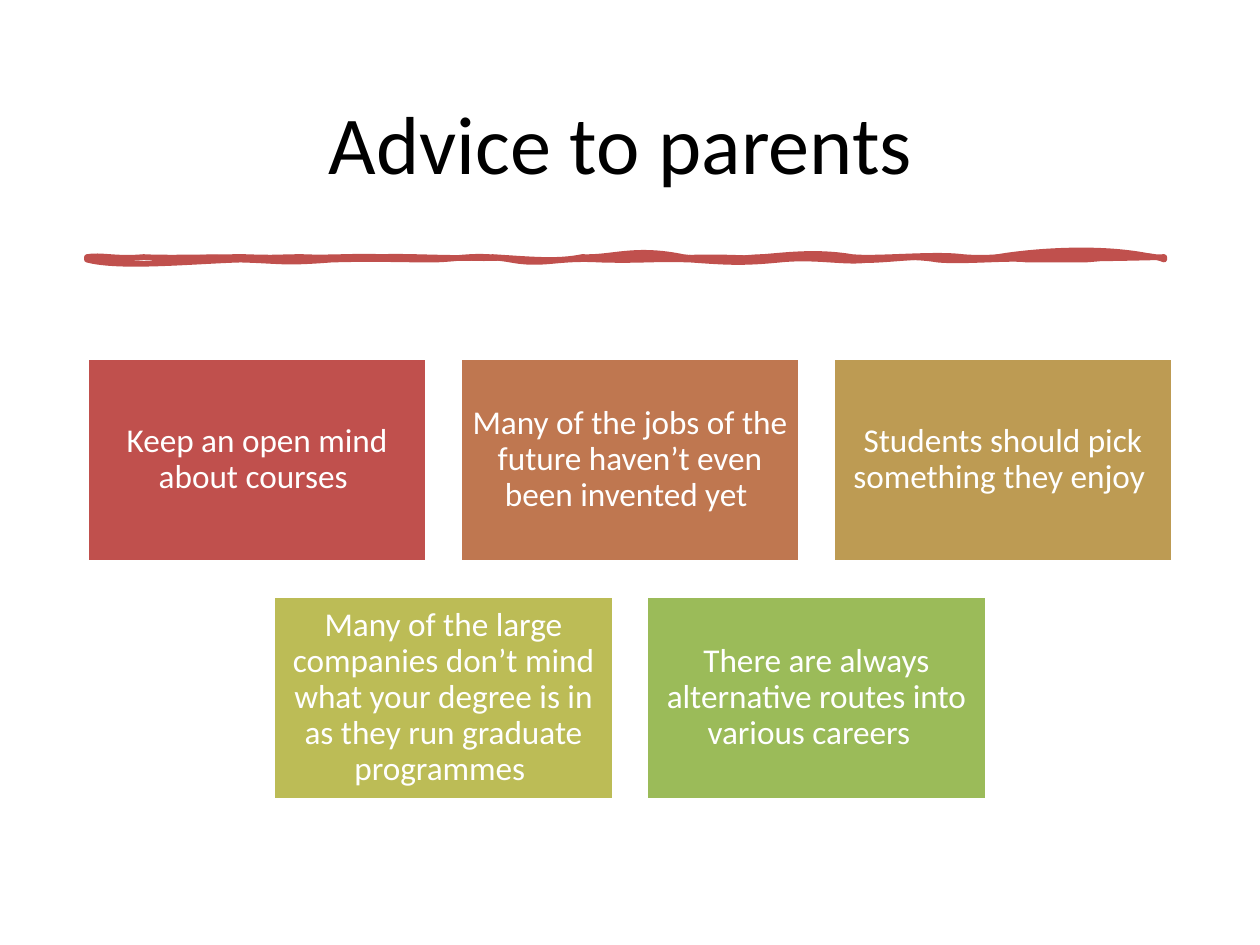
import lxml.etree
import pptx
import pptx.util
import pptx.dml.color
import pptx.enum.shapes
import pptx.enum.text
import pptx.oxml.ns

Inches = pptx.util.Inches
Pt = pptx.util.Pt
RGBColor = pptx.dml.color.RGBColor
qn = pptx.oxml.ns.qn

BLACK = RGBColor(0x00, 0x00, 0x00)
WHITE = RGBColor(0xFF, 0xFF, 0xFF)
RED = RGBColor(0xC0, 0x50, 0x4D)
RUST = RGBColor(0xBF, 0x77, 0x50)
GOLD = RGBColor(0xBD, 0x9B, 0x53)
OLIVE = RGBColor(0xBC, 0xBC, 0x56)
GREEN = RGBColor(0x9B, 0xBB, 0x59)

ROWS = [
    [("Keep an open mind about courses ", RED),
     ("Many of the jobs of the future haven’t even been invented yet ", RUST),
     ("Students should pick something they enjoy ", GOLD)],
    [("Many of the large companies don’t mind what your degree is in "
      "as they run graduate programmes ", OLIVE),
     ("There are always alternative routes into various careers  ", GREEN)],
]
CARD_W, CARD_H, GAP = 2.7, 1.62, 0.26
MID, TOP, PITCH = 5, 2.84, 1.89

# Brush stroke: every curve is (x1, y1, x2, y2, end x) and ends on its edge.
LEFT, RIGHT, UPPER, LOWER = 0.69, 9.24, 2.04, 2.06
EDGE_TOP = [
    (0.8, 2.02, 0.92, 2.06, 1.14), (1.31, 2.05, 1.67, 2.04, 1.94),
    (2.23, 2.05, 2.19, 2.04, 2.4), (2.61, 2.05, 2.84, 2.03, 3.02),
    (3.26, 2.03, 3.63, 2.06, 3.91), (4.23, 2.06, 4.42, 2.08, 4.62),
    (4.86, 2.05, 5.03, 1.96, 5.42), (5.76, 2.08, 5.93, 2.04, 6.05),
    (6.2, 2.03, 6.47, 1.99, 6.76), (6.96, 2.06, 7.41, 2.01, 7.64),
    (7.86, 2.06, 8.06, 2.02, 8.18), (8.34, 2.06, 8.84, 2.05, RIGHT)]
EDGE_LOW = [
    (9.11, 2, 8.78, 2.05, 8.61), (8.44, 2.06, 8.3, 2.06, 8.15),
    (8.03, 2.04, 7.64, 2.08, 7.44), (7.27, 2.03, 7.09, 2.04, 6.9),
    (6.71, 2.09, 6.49, 2.03, 6.19), (5.89, 2.09, 5.76, 2.08, 5.48),
    (5.17, 2.05, 5.1, 2.07, 4.76), (4.41, 2.04, 4.32, 2.11, 4.05),
    (3.76, 2.01, 3.64, 2.06, 3.42), (3.21, 2.06, 2.96, 2.05, 2.63),
    (2.24, 2.09, 2.25, 2.07, 1.91), (1.55, 2.07, 0.95, 2.13, LEFT)]
BODY_TOP = [
    (0.86, 2.03, 1, 2.03, 1.31), (1.63, 2.03, 1.59, 2.04, 1.77),
    (1.94, 2.02, 2.1, 2.05, 2.21), (2.33, 2.03, 2.52, 2.05, 2.65),
    (2.9, 2.05, 2.97, 2.02, 3.28), (3.58, 2.04, 3.65, 2.02, 3.91),
    (4.17, 2.08, 4.58, 2.05, 4.79), (5.07, 1.98, 5.18, 2.05, 5.33),
    (5.51, 2, 5.98, 2.03, 6.22), (6.5, 2.05, 6.66, 2.06, 7.1),
    (7.53, 2.06, 7.66, 2.02, 7.81), (7.99, 1.99, 8.75, 1.9, RIGHT)]
BODY_LOW = [
    (9.02, 2.04, 8.92, 2.03, 8.78), (8.7, 2.09, 8.3, 2.01, 7.9),
    (7.53, 2.08, 7.56, 2.04, 7.36), (7.14, 2.06, 6.82, 2.12, 6.64),
    (6.42, 2.01, 6.06, 2, 5.76), (5.45, 2.05, 5.39, 2.06, 5.05),
    (4.72, 2.09, 4.82, 2.07, 4.59), (4.4, 2.05, 4.28, 2.09, 4.05),
    (3.83, 2.09, 3.61, 2.05, 3.17), (2.73, 2.07, 2.75, 2.07, 2.45),
    (2.16, 2.05, 2.13, 2.05, 1.91), (1.72, 1.97, 1.31, 2.07, LEFT)]


def step(route, tag, *spots):
    """Add one path command, with its points measured from the stroke's corner."""
    node = lxml.etree.SubElement(route, qn(tag))
    for x, y in spots:
        lxml.etree.SubElement(node, qn("a:pt"), x=str(Inches(x - LEFT)),
                              y=str(Inches(y - UPPER)))


def trace(paths, top, low, **flags):
    """Add one closed path of curves along the top and back below."""
    route = lxml.etree.SubElement(
        paths, qn("a:path"), w=str(Inches(RIGHT - LEFT)),
        h=str(Inches(LOWER - UPPER)), **flags)
    step(route, "a:moveTo", (LEFT, UPPER))
    for y, curves in ((UPPER, top), (LOWER, low)):
        for x1, y1, x2, y2, end in curves:
            step(route, "a:cubicBezTo", (x1, y1), (x2, y2), (end, y))
        if y == UPPER:
            step(route, "a:lnTo", (RIGHT, LOWER))
    step(route, "a:close")


def write(frame, text, size=19, color=WHITE, inset=(0.08, 0.08), space=None):
    frame.word_wrap = True
    frame.vertical_anchor = pptx.enum.text.MSO_ANCHOR.MIDDLE
    frame.margin_left = frame.margin_right = Inches(inset[0])
    frame.margin_top = frame.margin_bottom = Inches(inset[1])
    para = frame.paragraphs[0]
    para.alignment = pptx.enum.text.PP_ALIGN.CENTER
    para.line_spacing = space
    run = para.add_run()
    run.text = text
    run.font.name = "Calibri"
    run.font.size = Pt(size)
    run.font.color.rgb = color


class Deck:
    def __init__(self):
        self.file = pptx.Presentation()
        self.file.slide_width = Inches(10)
        self.file.slide_height = Inches(7.5)
        self.slide = self.file.slides.add_slide(self.file.slide_layouts[6])

    def paint(self, shape, fill, line, width):
        shape.shadow.inherit = False
        shape.fill.solid()
        shape.fill.fore_color.rgb = fill
        shape.line.color.rgb = line
        shape.line.width = Pt(width)

    def title(self, text):
        box = self.slide.shapes.add_textbox(
            Inches(0.69), Inches(0.4), Inches(8.62), Inches(1.45))
        write(box.text_frame, text, size=47, color=BLACK, inset=(0.1, 0.05))

    def stroke(self, color):
        pen = self.slide.shapes.build_freeform(Inches(LEFT), Inches(UPPER))
        pen.add_line_segments([(Inches(RIGHT), Inches(LOWER))])
        shape = pen.convert_to_shape()
        self.paint(shape, color, color, 3.25)
        paths = next(shape._element.iter(qn("a:pathLst")))
        paths.remove(paths[0])
        trace(paths, EDGE_TOP, EDGE_LOW, fill="none")
        trace(paths, BODY_TOP, BODY_LOW, stroke="0")

    def card(self, x, y, text, color):
        box = self.slide.shapes.add_shape(
            pptx.enum.shapes.MSO_SHAPE.RECTANGLE,
            Inches(x), Inches(y), Inches(CARD_W), Inches(CARD_H))
        self.paint(box, color, WHITE, 2)
        write(box.text_frame, text, space=0.9)


def main():
    deck = Deck()
    deck.title("Advice to parents ")
    deck.stroke(RED)
    for r, row in enumerate(ROWS):
        left = MID - (len(row) * (CARD_W + GAP) - GAP) / 2
        for c, (text, color) in enumerate(row):
            deck.card(left + c * (CARD_W + GAP), TOP + r * PITCH, text, color)
    deck.file.save("out.pptx")


if __name__ == "__main__":
    main()
